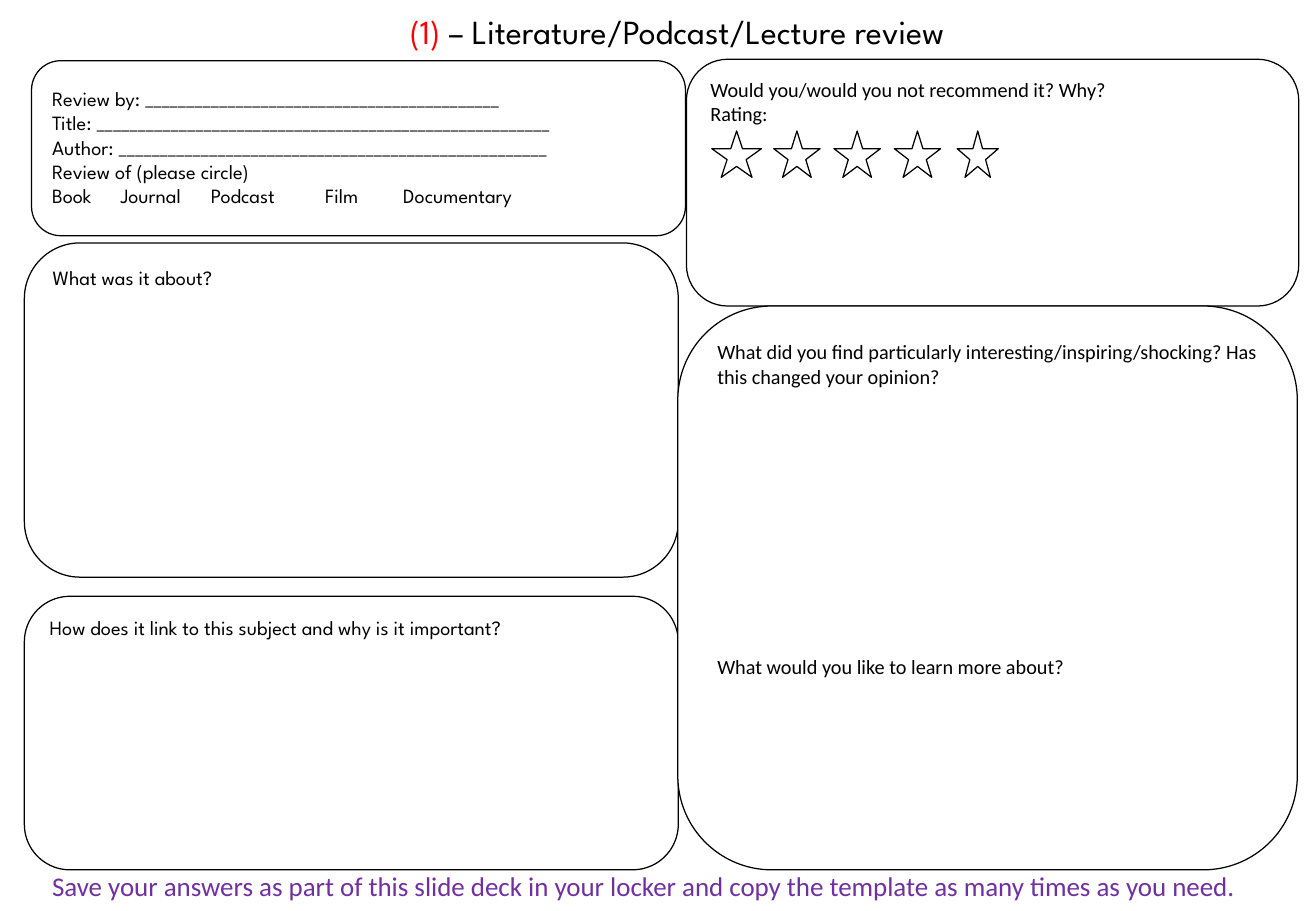
from dataclasses import dataclass

from lxml.etree import SubElement
from pptx import Presentation
from pptx.dml.color import RGBColor
from pptx.enum.shapes import MSO_SHAPE
from pptx.enum.text import MSO_ANCHOR, PP_ALIGN
from pptx.oxml.ns import qn
from pptx.util import Cm, Pt


@dataclass(frozen=True)
class Theme:
    paper: RGBColor = RGBColor(255, 255, 255)
    ink: RGBColor = RGBColor(0, 0, 0)
    number: RGBColor = RGBColor(255, 0, 0)
    reminder: RGBColor = RGBColor(0x70, 0x30, 0xA0)
    heading_font: str = "League Spartan"
    body_font: str = "Calibri"
    title_size: Pt = Pt(20)
    reminder_size: Pt = Pt(16)
    body_size: Pt = Pt(12)
    outline: Pt = Pt(0.75)


THEME = Theme()


def apply_format(target, values):
    for name, value in values.items():
        setattr(target, name, value)


def add_outline(slide, kind, box, filled=True, outlined=True):
    shape = slide.shapes.add_shape(kind, *(Cm(length) for length in box))
    shape.shadow.inherit = False
    if filled:
        shape.fill.solid()
        shape.fill.fore_color.rgb = THEME.paper
    else:
        shape.fill.background()
    if outlined:
        shape.line.color.rgb = THEME.ink
        shape.line.width = THEME.outline
    else:
        shape.line.fill.background()
    return shape


def write(shape, lines, font, size=THEME.body_size, align=PP_ALIGN.LEFT):
    """Write one paragraph per line; a line is a list of (text, colour) runs."""
    frame = shape.text_frame
    apply_format(frame, {"word_wrap": True, "vertical_anchor": MSO_ANCHOR.TOP})
    for index, line in enumerate(lines):
        paragraph = frame.add_paragraph() if index else frame.paragraphs[0]
        paragraph.alignment = align
        for text, color in line:
            run = paragraph.add_run()
            run.text = text
            apply_format(run.font, {"name": font, "size": size})
            run.font.color.rgb = color
    return frame.paragraphs


def add_tab_stops(paragraph, stops):
    tab_list = SubElement(paragraph._p.get_or_add_pPr(), qn("a:tabLst"))
    for stop in stops:
        SubElement(tab_list, qn("a:tab"), pos=str(Cm(stop)), algn="l")


def add_question_box(slide, box, questions, font, gap=0):
    shape = add_outline(slide, MSO_SHAPE.FLOWCHART_ALTERNATE_PROCESS, box)
    paragraphs = write(shape, [[(text, THEME.ink)] for text in questions], font)
    if gap:
        paragraphs[-1].space_before = Pt(gap)


def add_recommendation(slide, box):
    left, top = box[:2]
    questions = ["Would you/would you not recommend it? Why?", "Rating:"]
    add_question_box(slide, box, questions, THEME.body_font)
    # Rating stars, centred at an even pitch
    for index, width in enumerate([1.04, 0.97, 0.97, 0.97, 0.86]):
        center = left + 1.05 + 1.26 * index
        star = (center - width / 2, top + 1.5, width, 0.97)
        add_outline(slide, MSO_SHAPE.STAR_5_POINT, star)


def add_review_details(slide, box):
    left, top, width, height = box
    blanks = {"Review by": 43, "Title": 55, "Author": 52}
    lines = [f"{label}: {'_' * count}" for label, count in blanks.items()]
    lines.append("Review of (please circle)")
    lines.append("\t".join(["Book", "Journal", "Podcast", "Film", "Documentary"]))
    form = add_outline(slide, MSO_SHAPE.RECTANGLE,
                       (left + 0.18, top + 0.41, width - 0.33, height - 1.04),
                       outlined=False)
    paragraphs = write(form, [[(text, THEME.ink)] for text in lines], THEME.heading_font)
    add_tab_stops(paragraphs[-1], [1.43, 3.32, 5.71, 7.34])
    add_outline(slide, MSO_SHAPE.FLOWCHART_ALTERNATE_PROCESS, box, filled=False)


def add_title(slide, box):
    shape = add_outline(slide, MSO_SHAPE.RECTANGLE, box, outlined=False)
    line = [("(1)", THEME.number), (" – Literature/Podcast/Lecture review", THEME.ink)]
    write(shape, [line], THEME.heading_font, THEME.title_size, PP_ALIGN.CENTER)


def add_reminder(slide, box):
    shape = slide.shapes.add_textbox(*(Cm(length) for length in box))
    text = ("Save your answers as part of this slide deck in your locker "
            "and copy the template as many times as you need.")
    write(shape, [[(text, THEME.reminder)]], THEME.body_font, THEME.reminder_size)


def main():
    presentation = Presentation()
    apply_format(presentation, {"slide_width": Cm(27.51), "slide_height": Cm(19.05)})
    slide = presentation.slides.add_slide(presentation.slide_layouts[6])

    # Left and right question boxes
    add_recommendation(slide, (14.35, 1.24, 12.8, 5.16))
    add_question_box(slide, (0.51, 12.47, 13.67, 5.72),
                     ["How does it link to this subject and why is it important?"],
                     THEME.heading_font)
    add_question_box(slide, (0.51, 5.08, 13.67, 6.99),
                     ["What was it about?"], THEME.heading_font)
    add_question_box(slide, (14.17, 6.4, 12.95, 11.79),
                     ["What did you find particularly interesting/inspiring/shocking? "
                      "Has this changed your opinion?",
                      "What would you like to learn more about?"],
                     THEME.body_font, gap=158)

    # Heading, review details and closing reminder
    add_title(slide, (6.35, 0.1, 15.62, 1.02))
    add_review_details(slide, (0.66, 1.27, 13.67, 3.66))
    add_reminder(slide, (0.84, 18.06, 27.51, 0.94))
    presentation.save("out.pptx")


if __name__ == "__main__":
    main()
